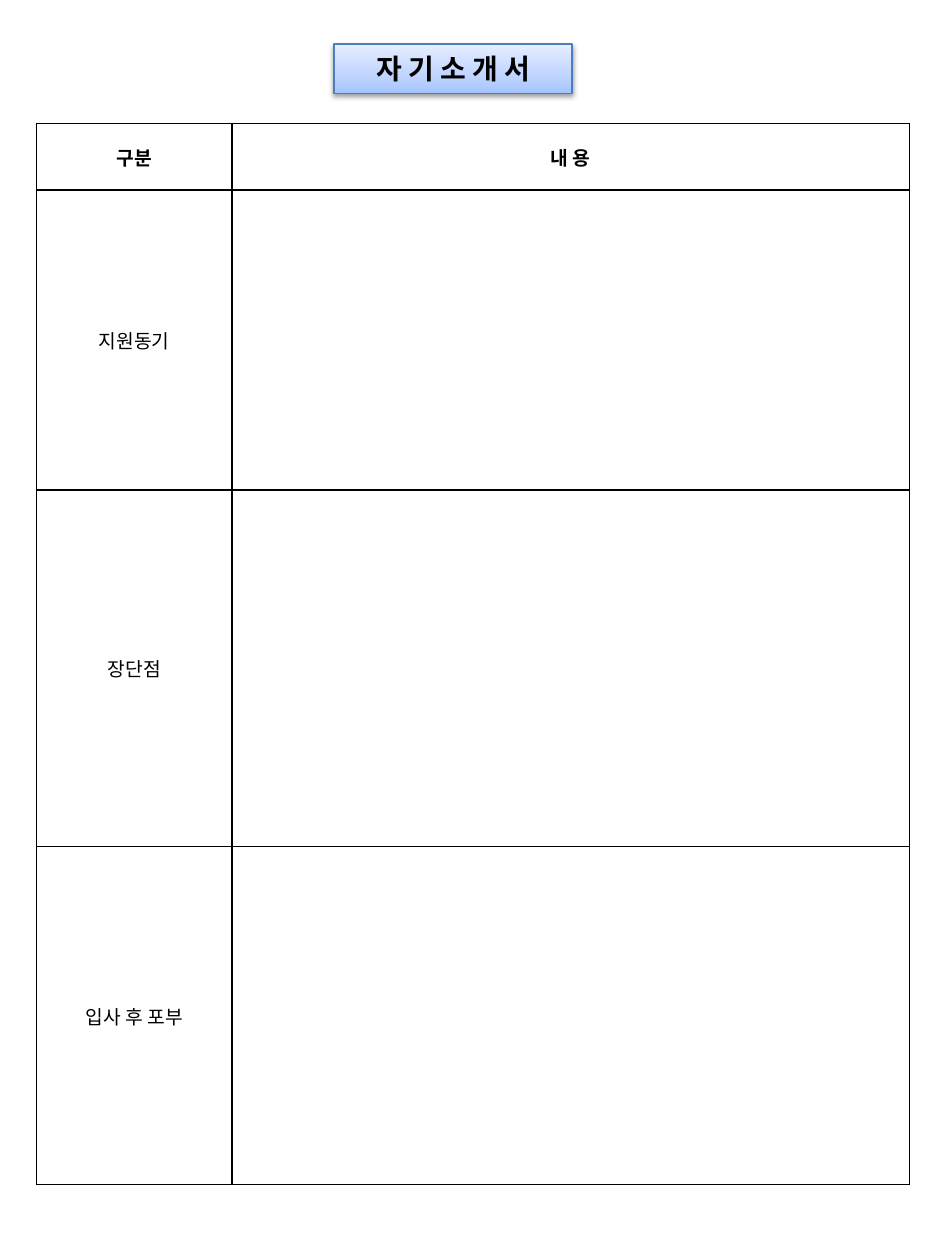
"""Build a one-page Korean self-introduction form with a title plate and a table."""
from dataclasses import dataclass

from lxml.etree import SubElement
from pptx import Presentation
from pptx.dml.color import RGBColor
from pptx.enum.shapes import MSO_SHAPE
from pptx.enum.text import MSO_ANCHOR, PP_ALIGN
from pptx.oxml.ns import qn
from pptx.util import Inches, Pt

TITLE = "자 기 소 개 서"
ROWS = [
    ("구분", "내 용"),
    ("지원동기", ""),
    ("장단점", ""),
    ("입사 후 포부", ""),
]
SLIDE_SIZE = (7.5, 10)
TITLE_AREA = (2.65, 0.35, 1.89, 0.39)
TABLE_ORIGIN = (0.29, 0.98)
COLUMN_WIDTHS = (1.55, 5.38)
ROW_HEIGHTS = (0.53, 2.38, 2.83, 2.68)


@dataclass(frozen=True)
class Theme:
    font: str = "Noto Sans CJK KR"
    ink: str = "000000"
    paper: str = "FFFFFF"
    plate_line: str = "4B7EBC"
    plate_stops: tuple = ((0, "A4C4FF"), (35, "BFD4FF"), (100, "E6EEFF"))
    title_size: int = 16
    table_size: int = 11
    plate_line_width: float = 0.75
    border_width: int = 1


THEME = Theme()


def add_color(parent, color):
    return SubElement(parent, qn("a:srgbClr"), val=color)


def write_text(frame, text, size=THEME.table_size, bold=False):
    para = frame.paragraphs[0]
    para.alignment = PP_ALIGN.CENTER
    span = para.add_run()
    span.text = text
    font = span.font
    font.name, font.size, font.bold = THEME.font, Pt(size), bold
    font.color.rgb = RGBColor.from_string(THEME.ink)
    SubElement(span._r.get_or_add_rPr(), qn("a:ea"), typeface=THEME.font)


def style_plate(box):
    box.fill.gradient()
    gradient = box._element.spPr.find(qn("a:gradFill"))
    for child in list(gradient):
        gradient.remove(child)
    stops = SubElement(gradient, qn("a:gsLst"))
    for position, color in THEME.plate_stops:
        add_color(SubElement(stops, qn("a:gs"), pos=str(position * 1000)), color)
    SubElement(gradient, qn("a:lin"), ang=str(270 * 60000), scaled="0")
    box.line.color.rgb = RGBColor.from_string(THEME.plate_line)
    box.line.width = Pt(THEME.plate_line_width)
    box.shadow.inherit = False
    effects = box._element.spPr.find(qn("a:effectLst"))
    shadow = SubElement(effects, qn("a:outerShdw"), blurRad=str(Pt(3.1)),
                        dist=str(Pt(1.6)), dir=str(90 * 60000), rotWithShape="0")
    SubElement(add_color(shadow, THEME.ink), qn("a:alpha"), val="38000")


def style_cell(cell):
    properties = cell._tc.get_or_add_tcPr()
    for side in ("lnL", "lnR", "lnT", "lnB"):
        border = SubElement(properties, qn(f"a:{side}"), w=str(Pt(THEME.border_width)))
        add_color(SubElement(border, qn("a:solidFill")), THEME.ink)
    cell.fill.solid()
    cell.fill.fore_color.rgb = RGBColor.from_string(THEME.paper)
    cell.vertical_anchor = MSO_ANCHOR.MIDDLE


def add_title(page):
    box = page.shapes.add_shape(MSO_SHAPE.RECTANGLE, *map(Inches, TITLE_AREA))
    style_plate(box)
    box.text_frame.vertical_anchor = MSO_ANCHOR.MIDDLE
    write_text(box.text_frame, TITLE, size=THEME.title_size, bold=True)


def add_form(page):
    area = (*TABLE_ORIGIN, sum(COLUMN_WIDTHS), sum(ROW_HEIGHTS))
    table = page.shapes.add_table(len(ROWS), len(COLUMN_WIDTHS), *map(Inches, area)).table
    table.first_row = table.horz_banding = False
    for column, width in zip(table.columns, COLUMN_WIDTHS):
        column.width = Inches(width)
    for row, height in zip(table.rows, ROW_HEIGHTS):
        row.height = Inches(height)
    for row_index, texts in enumerate(ROWS):
        for column_index, text in enumerate(texts):
            cell = table.cell(row_index, column_index)
            style_cell(cell)
            if text:
                write_text(cell.text_frame, text, bold=row_index == 0)


def main():
    deck = Presentation()
    deck.slide_width, deck.slide_height = map(Inches, SLIDE_SIZE)
    page = deck.slides.add_slide(deck.slide_layouts[6])
    add_title(page)
    add_form(page)
    deck.save("out.pptx")


if __name__ == "__main__":
    main()
